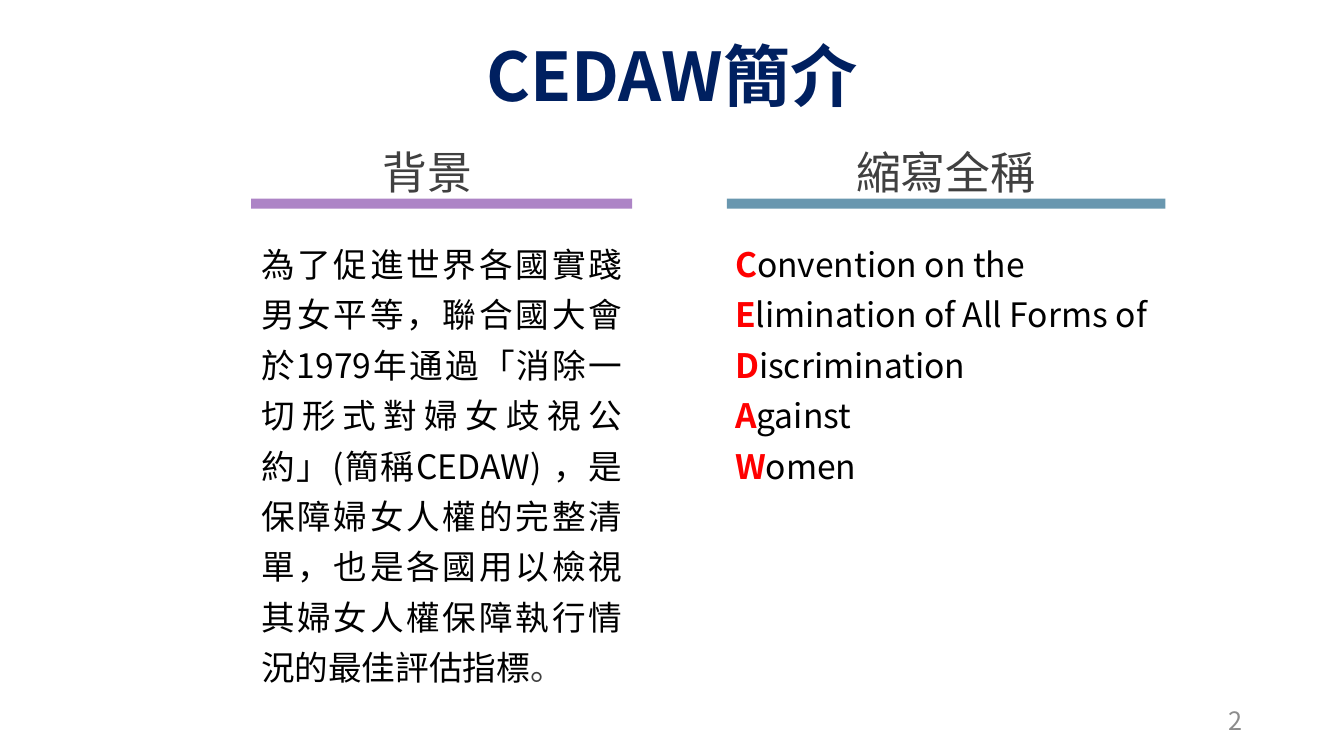
from lxml.etree import SubElement
from pptx import Presentation
from pptx.dml.color import RGBColor
from pptx.enum.shapes import MSO_SHAPE
from pptx.enum.text import MSO_ANCHOR, MSO_AUTO_SIZE, PP_ALIGN
from pptx.oxml.ns import qn
from pptx.util import Inches, Pt

COLORS = {
    "navy": "002060",
    "purple": "AD84C6",
    "teal": "6997AF",
    "red": "FF0000",
    "black": "000000",
    "dark": "404040",
    "gray": "8C8C8C",
}
CJK_FONT = "Noto Sans CJK SC"
LATIN_FONT = "Calibri"

BACKGROUND = (
    "為了促進世界各國實踐男女平等，聯合國大會於1979年通過「消除一切形式對婦女歧視公約」"
    "(簡稱CEDAW) ，是保障婦女人權的完整清單，也是各國用以檢視其婦女人權保障執行情況的最佳評估指標"
)
FULL_NAME = [
    "Convention on the",
    "Elimination of All Forms of",
    "Discrimination",
    "Against",
    "Women",
]


def add_span(paragraph, text, *, size=24, color="black", bold=False, font=CJK_FONT):
    """Add one formatted run of text to a paragraph."""
    span = paragraph.add_run()
    span.text = text
    span.font.name = font
    span.font.size = Pt(size)
    span.font.bold = bold
    span.font.color.rgb = RGBColor.from_string(COLORS[color])
    SubElement(span.font._element, qn("a:ea"), typeface=font)


class SlideBuilder:
    """Holds the shared style and the page being filled."""

    def __init__(self, page):
        self.page = page

    def fill_box(self, box, at, paragraphs, *, align=PP_ALIGN.LEFT, spacing=0.9,
                 anchor=MSO_ANCHOR.MIDDLE, indent=0):
        """Place a text shape; each paragraph is a list of (text, format) spans."""
        box.left, box.top, box.width, box.height = map(Inches, at)
        frame = box.text_frame
        frame.word_wrap = True
        frame.auto_size = MSO_AUTO_SIZE.NONE
        frame.vertical_anchor = anchor
        for number, spans in enumerate(paragraphs):
            para = frame.add_paragraph() if number else frame.paragraphs[0]
            properties = para._p.get_or_add_pPr()
            properties.set("marL", str(Inches(indent)))
            properties.set("indent", "0")
            SubElement(properties, qn("a:buNone"))
            para.alignment = align
            para.line_spacing = spacing
            para.space_before = Pt(0)
            for text, style in spans:
                add_span(para, text, **style)

    def placeholder(self, index, at, paragraphs, **layout):
        self.fill_box(self.page.placeholders[index], at, paragraphs, **layout)

    def text(self, at, paragraphs, **layout):
        box = self.page.shapes.add_textbox(*map(Inches, at))
        self.fill_box(box, at, paragraphs, **layout)

    def bar(self, at, color):
        bar = self.page.shapes.add_shape(MSO_SHAPE.RECTANGLE, *map(Inches, at))
        bar.shadow.inherit = False
        bar.fill.solid()
        bar.fill.fore_color.rgb = RGBColor.from_string(COLORS[color])
        bar.line.fill.background()


def main():
    deck = Presentation()
    deck.slide_width, deck.slide_height = Inches(13.33), Inches(7.5)
    comparison = deck.slide_layouts[4]
    builder = SlideBuilder(deck.slides.add_slide(comparison))

    # Title
    builder.placeholder(
        0, (0, 0.37, 13.33, 0.84),
        [[("CEDAW簡介", {"size": 48, "color": "navy", "bold": True})]],
        align=PP_ALIGN.CENTER,
    )

    # Column headings with their bars
    headings = [
        (1, "背景", 2.35, (2.49, 3.78), "purple"),
        (3, "縮寫全稱", 7.49, (7.21, 4.35), "teal"),
    ]
    for index, heading, left, (bar_left, bar_width), color in headings:
        builder.bar((bar_left, 1.97, bar_width, 0.1), color)
        builder.placeholder(
            index, (left, 1.53, 3.78, 0.42),
            [[(heading, {"size": 32, "color": "dark"})]],
            align=PP_ALIGN.CENTER,
        )

    # Background text
    body = {"spacing": Pt(36), "anchor": MSO_ANCHOR.TOP}
    builder.placeholder(
        2, (2.49, 2.27, 3.78, 4.64),
        [[(BACKGROUND, {}), ("。", {"color": "dark", "font": LATIN_FONT})]],
        align=PP_ALIGN.JUSTIFY, **body,
    )

    # Full name, initials highlighted
    builder.placeholder(
        4, (6.69, 2.27, 4.87, 2.89),
        [[(line[0], {"color": "red", "bold": True}), (line[1:], {})] for line in FULL_NAME],
        indent=0.5, **body,
    )

    # Page number
    builder.text(
        (9.42, 6.95, 3, 0.4), [[("2", {"size": 18, "color": "gray"})]],
        align=PP_ALIGN.RIGHT, spacing=1.0,
    )

    deck.save("out.pptx")


if __name__ == "__main__":
    main()
